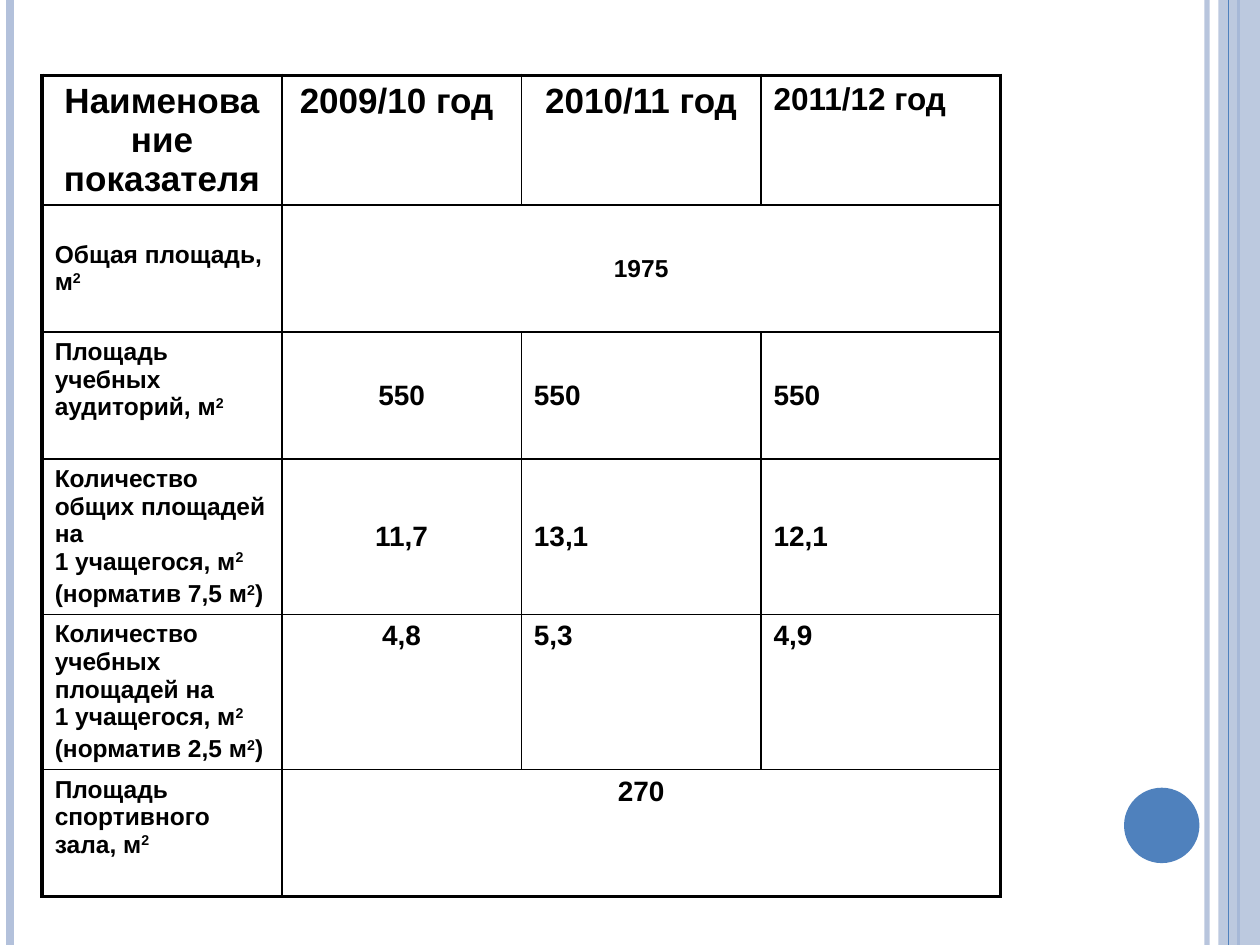
from pptx import Presentation
from pptx.dml.color import RGBColor
from pptx.enum.shapes import MSO_CONNECTOR, MSO_SHAPE
from pptx.enum.text import MSO_ANCHOR, PP_ALIGN
from pptx.oxml.ns import qn
from pptx.util import Cm, Pt
from lxml import etree

STRAIGHT = MSO_CONNECTOR.STRAIGHT
RECTANGLE, OVAL = MSO_SHAPE.RECTANGLE, MSO_SHAPE.OVAL
TOP, MIDDLE = MSO_ANCHOR.TOP, MSO_ANCHOR.MIDDLE
LEFT, CENTER = PP_ALIGN.LEFT, PP_ALIGN.CENTER

BLACK, BLUE, PALE = "000000", "4F81BD", "B3C1DB"
SLIDE_WIDTH, SLIDE_HEIGHT = 25.4, 19.05

HEADINGS = ["Наименование показателя", "2009/10 год ", "2010/11 год", "2011/12 год"]
INDICATORS = [
    (["Общая площадь, м²"], ["1975"], 14, MIDDLE, MIDDLE),
    (["Площадь учебных аудиторий, м²"], ["550", "550", "550"], 16, TOP, MIDDLE),
    (["Количество общих площадей на \n1 учащегося, м²", "(норматив 7,5 м²)"],
     ["11,7", "13,1", "12,1"], 16, TOP, MIDDLE),
    (["Количество учебных площадей на \n1 учащегося, м²", "(норматив 2,5 м²)"],
     ["4,8", "5,3", "4,9"], 16, TOP, TOP),
    (["Площадь спортивного зала, м²"], ["270"], 16, TOP, TOP),
]


def color(hex_string):
    return RGBColor.from_string(hex_string)


def set_alpha(fill, percent):
    for tone in fill.iter(qn("a:srgbClr")):
        etree.SubElement(tone, qn("a:alpha")).set("val", str(percent * 1000))


class SlideBuilder:
    font = "Arial"
    inner_border = 1
    outer_border = 2.25

    def __init__(self, slide):
        self.slide = slide

    def stripe(self, x, tone, width, alpha=100):
        stripe = self.slide.shapes.add_connector(
            STRAIGHT, Cm(x), Cm(0), Cm(x), Cm(SLIDE_HEIGHT))
        stripe.line.color.rgb = color(tone)
        stripe.line.width = Pt(width)
        properties = stripe._element.spPr
        set_alpha(properties, alpha)
        etree.SubElement(properties, qn("a:effectLst"))

    def shape(self, kind, x, y, width, height, tone, alpha=100):
        shape = self.slide.shapes.add_shape(kind, Cm(x), Cm(y), Cm(width), Cm(height))
        shape.shadow.inherit = False
        shape.fill.solid()
        shape.fill.fore_color.rgb = color(tone)
        shape.line.fill.background()
        set_alpha(shape._element.spPr, alpha)

    def table(self, x, y, rows, columns, column_width, row_height):
        frame = self.slide.shapes.add_table(
            rows, columns, Cm(x), Cm(y),
            Cm(column_width * columns), Cm(row_height * rows))
        table = frame.table
        table.first_row = table.horz_banding = False
        for column in table.columns:
            column.width = Cm(column_width)
        for row in table.rows:
            row.height = Cm(row_height)
        return table

    def cell_text(self, cell, lines, size, align=LEFT, anchor=TOP):
        cell.vertical_anchor = anchor
        cell.text_frame.text = ""
        for number, line in enumerate(lines):
            if number:
                paragraph = cell.text_frame.add_paragraph()
                paragraph.space_before = Pt(2.8)
            else:
                paragraph = cell.text_frame.paragraphs[0]
            paragraph.alignment = align
            before, square, after = line.partition("²")
            paragraph.text = before
            if square:
                power = paragraph.add_run()
                power.text = "2"
                power._r.get_or_add_rPr().set("baseline", "30000")
            if after:
                paragraph.add_run().text = after
            for run in paragraph.runs:
                run.font.name = self.font
                run.font.size = Pt(size)
                run.font.bold = True
                run.font.color.rgb = color(BLACK)
            for line_break in paragraph._p.findall(qn("a:br")):
                etree.SubElement(line_break, qn("a:rPr")).set("sz", str(size * 100))

    def borders(self, table):
        last_row, last_column = len(table.rows) - 1, len(table.columns) - 1
        for r in range(last_row + 1):
            for c in range(last_column + 1):
                cell = table.cell(r, c)
                cell.fill.background()
                right = c + cell.span_width - 1 if cell.is_merge_origin else c
                edges = {"L": c == 0, "R": right == last_column,
                         "T": r == 0, "B": r == last_row}
                properties = cell._tc.get_or_add_tcPr()
                for place, (side, outer) in enumerate(edges.items()):
                    border = etree.Element(qn(f"a:ln{side}"))
                    width = self.outer_border if outer else self.inner_border
                    border.set("w", str(int(Pt(width))))
                    fill = etree.SubElement(border, qn("a:solidFill"))
                    etree.SubElement(fill, qn("a:srgbClr")).set("val", BLACK)
                    properties.insert(place, border)


def main():
    presentation = Presentation()
    presentation.slide_width = Cm(SLIDE_WIDTH)
    presentation.slide_height = Cm(SLIDE_HEIGHT)
    builder = SlideBuilder(presentation.slides.add_slide(presentation.slide_layouts[6]))

    builder.stripe(24.33, PALE, 3, 93)
    builder.stripe(0.2, PALE, 4.5)
    builder.stripe(24.97, BLUE, 1.5)
    builder.shape(RECTANGLE, 24.56, 0, 0.84, SLIDE_HEIGHT, PALE, 87)
    builder.stripe(24.77, BLUE, 0.75)
    builder.shape(OVAL, 22.66, 15.88, 1.52, 1.52, BLUE)

    areas = builder.table(0.85, 1.52, len(INDICATORS) + 1, len(HEADINGS), 4.83, 2.56)
    for column, heading in enumerate(HEADINGS):
        is_last = column == len(HEADINGS) - 1
        builder.cell_text(areas.cell(0, column), [heading], 18 if is_last else 20,
                          LEFT if is_last else CENTER, TOP if column else MIDDLE)
    for row, (name, values, size, name_anchor, value_anchor) in enumerate(INDICATORS, 1):
        builder.cell_text(areas.cell(row, 0), name, 14, anchor=name_anchor)
        if len(values) == 1:
            areas.cell(row, 1).merge(areas.cell(row, len(HEADINGS) - 1))
        for column, value in enumerate(values, 1):
            builder.cell_text(areas.cell(row, column), [value], size,
                              CENTER if column == 1 else LEFT, value_anchor)
    builder.borders(areas)

    presentation.save("out.pptx")


if __name__ == "__main__":
    main()
